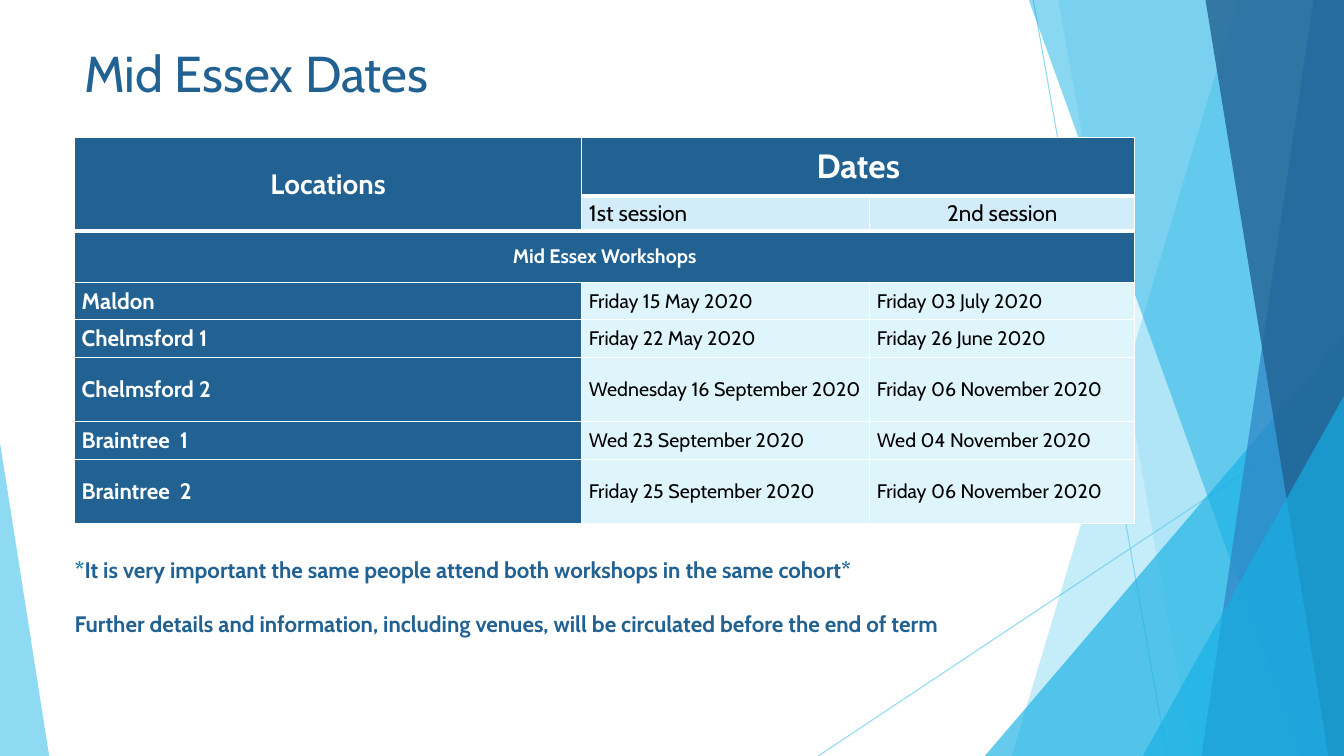
import pptx
import pptx.dml.color
import pptx.enum.shapes
import pptx.enum.text
import pptx.oxml
import pptx.oxml.ns
import pptx.util
from pptx.util import Cm

FONT = "Cabin"
NAVY, SKY, CYAN, BLUE = "226292", "5FCBEF", "17B0E4", "2E83C3"
WHITE, BLACK, TEAL = "FFFFFF", "000000", "0F7698"
SESSION_FILL, DATE_FILL = "D2ECF9", "DFF5FC"
WIDTH, HEIGHT = 33.87, 19.05

TITLE = "Mid Essex Dates"
NOTES = [
    [("*", TEAL),
     ("It is very important the same people attend both workshops in the same cohort*", NAVY)],
    [("Further details and information, including venues, will be circulated "
      "before the end of term", NAVY)],
]
WORKSHOPS = [
    ("Maldon", "Friday 15 May 2020", "Friday 03 July 2020"),
    ("Chelmsford 1", "Friday 22 May 2020", "Friday 26 June 2020"),
    ("Chelmsford 2", "Wednesday 16 September 2020", "Friday 06 November 2020"),
    ("Braintree  1", "Wed 23 September 2020", "Wed 04 November 2020"),
    ("Braintree  2", "Friday 25 September 2020", "Friday 06 November 2020"),
]
COLUMN_WIDTHS = [12.78, 7.26, 6.68]
ROW_HEIGHTS = [1.47, 0.89, 1.3, 0.94, 0.94, 1.63, 0.94, 1.63]
THICK_EDGES = {(0, "B"), (1, "T"), (1, "B"), (2, "T")}

# Start and end of each thin line
LINES = [((26.04, 0), (29.41, HEIGHT)), ((WIDTH, 10.24), (20.62, HEIGHT))]
# Panels reach the right edge: x at the top, x at the bottom, colour, opacity
# Triangles stand on the bottom edge: left, top, width, peak, colour, opacity
DECORATIONS = [
    ("panel", 31.19, 25.5, SKY, 36),
    ("panel", 26.67, 30.05, SKY, 20),
    ("triangle", 24.82, 8.46, 9.05, 1, CYAN, 66),
    ("panel", 25.93, 32.79, CYAN, 50),
    ("panel", 33.1, 30.28, BLUE, 70),
    ("panel", 30.38, 33.48, NAVY, 80),
    ("triangle", 28.8, 9.98, 5.07, 1, CYAN, 66),
    ("triangle", 0, 11.15, 1.24, 0, SKY, 70),
]


def color(value):
    return pptx.dml.color.RGBColor.from_string(value)


def set_opacity(shape, percent):
    for element in shape.element.spPr.iter(pptx.oxml.ns.qn("a:srgbClr")):
        alpha = pptx.oxml.parse_xml(
            f'<a:alpha {pptx.oxml.ns.nsdecls("a")} val="{percent * 1000}"/>')
        element.append(alpha)


def paint(shape, fill, opacity):
    shape.shadow.inherit = False
    shape.fill.solid()
    shape.fill.fore_color.rgb = color(fill)
    shape.line.fill.background()
    set_opacity(shape, opacity)


def add_line(slide, start, end):
    line = slide.shapes.add_connector(
        pptx.enum.shapes.MSO_CONNECTOR.STRAIGHT, *[Cm(value) for value in start + end])
    line.line.color.rgb = color(SKY)
    line.line.width = pptx.util.Pt(0.75)
    set_opacity(line, 70)
    line.element.spPr.append(
        pptx.oxml.parse_xml(f'<a:effectLst {pptx.oxml.ns.nsdecls("a")}/>'))


def add_panel(slide, top_x, bottom_x, fill, opacity):
    builder = slide.shapes.build_freeform(Cm(top_x), 0)
    corners = [(WIDTH, 0), (WIDTH, HEIGHT), (bottom_x, HEIGHT)]
    builder.add_line_segments([(Cm(x), Cm(y)) for x, y in corners], close=True)
    paint(builder.convert_to_shape(), fill, opacity)


def add_triangle(slide, left, top, width, peak, fill, opacity):
    triangle = slide.shapes.add_shape(
        pptx.enum.shapes.MSO_SHAPE.ISOSCELES_TRIANGLE,
        Cm(left), Cm(top), Cm(width), Cm(HEIGHT - top))
    triangle.adjustments[0] = peak
    paint(triangle, fill, opacity)


def add_run(paragraph, text, size, text_color, bold=False):
    run = paragraph.add_run()
    run.text = text
    run.font.name = FONT
    run.font.size = pptx.util.Pt(size)
    run.font.bold = bold
    run.font.color.rgb = color(text_color)


def add_text_frame(slide, left, top, width, height):
    frame = slide.shapes.add_textbox(Cm(left), Cm(top), Cm(width), Cm(height)).text_frame
    frame.word_wrap = True
    return frame


def fill_cell(table, row, column, text, size, fill, text_color=WHITE, centred=False):
    cell = table.cell(row, column)
    cell.fill.solid()
    cell.fill.fore_color.rgb = color(fill)
    cell.vertical_anchor = pptx.enum.text.MSO_ANCHOR.MIDDLE
    paragraph = cell.text_frame.paragraphs[0]
    if centred:
        paragraph.alignment = pptx.enum.text.PP_ALIGN.CENTER
    add_run(paragraph, text, size, text_color, bold=text_color == WHITE)


def prepare_cell(cell, row):
    """Set the margins and the white borders."""
    cell.margin_left = cell.margin_right = Cm(0.18)
    cell.margin_top = cell.margin_bottom = 0
    properties = cell._tc.get_or_add_tcPr()
    for side in "LRTB":
        width = pptx.util.Pt(3 if (row, side) in THICK_EDGES else 1)
        properties.append(pptx.oxml.parse_xml(
            f'<a:ln{side} {pptx.oxml.ns.nsdecls("a")} w="{width}"><a:solidFill>'
            f'<a:srgbClr val="{WHITE}"/></a:solidFill></a:ln{side}>'))


def add_dates_table(slide):
    table = slide.shapes.add_table(
        len(ROW_HEIGHTS), len(COLUMN_WIDTHS), Cm(1.88), Cm(3.46),
        Cm(sum(COLUMN_WIDTHS)), Cm(sum(ROW_HEIGHTS))).table
    table.first_row = table.horz_banding = False
    for column, width in zip(table.columns, COLUMN_WIDTHS):
        column.width = Cm(width)
    for index, (row, height) in enumerate(zip(table.rows, ROW_HEIGHTS)):
        row.height = Cm(height)
        for cell in row.cells:
            prepare_cell(cell, index)

    table.cell(0, 0).merge(table.cell(1, 0))
    table.cell(0, 1).merge(table.cell(0, 2))
    table.cell(2, 0).merge(table.cell(2, 2))
    fill_cell(table, 0, 0, "Locations", 20, NAVY, centred=True)
    fill_cell(table, 0, 1, "Dates", 24, NAVY, centred=True)
    fill_cell(table, 1, 1, "1st session", 16, SESSION_FILL, BLACK)
    fill_cell(table, 1, 2, "2nd session", 16, SESSION_FILL, BLACK, centred=True)
    fill_cell(table, 2, 0, "Mid Essex Workshops", 14, NAVY, centred=True)
    for row, (location, *dates) in enumerate(WORKSHOPS, start=3):
        fill_cell(table, row, 0, location, 16, NAVY)
        for column, date in enumerate(dates, start=1):
            fill_cell(table, row, column, date, 14, DATE_FILL, BLACK)


def main():
    presentation = pptx.Presentation()
    presentation.slide_width, presentation.slide_height = Cm(WIDTH), Cm(HEIGHT)
    slide = presentation.slides.add_slide(presentation.slide_layouts[6])

    for start, end in LINES:
        add_line(slide, start, end)
    for kind, *values in DECORATIONS:
        (add_panel if kind == "panel" else add_triangle)(slide, *values)

    title = add_text_frame(slide, 1.88, 0.94, 23.88, 2.13)
    add_run(title.paragraphs[0], TITLE, 36, NAVY)

    notes = add_text_frame(slide, 1.63, 13.89, 25.55, 3.68)
    for index, runs in enumerate(NOTES):
        paragraph = notes.add_paragraph() if index else notes.paragraphs[0]
        paragraph.space_before = pptx.util.Pt(19.4 if index else 0)
        for text, text_color in runs:
            add_run(paragraph, text, 16, text_color, bold=True)

    add_dates_table(slide)
    presentation.save("out.pptx")


if __name__ == "__main__":
    main()
